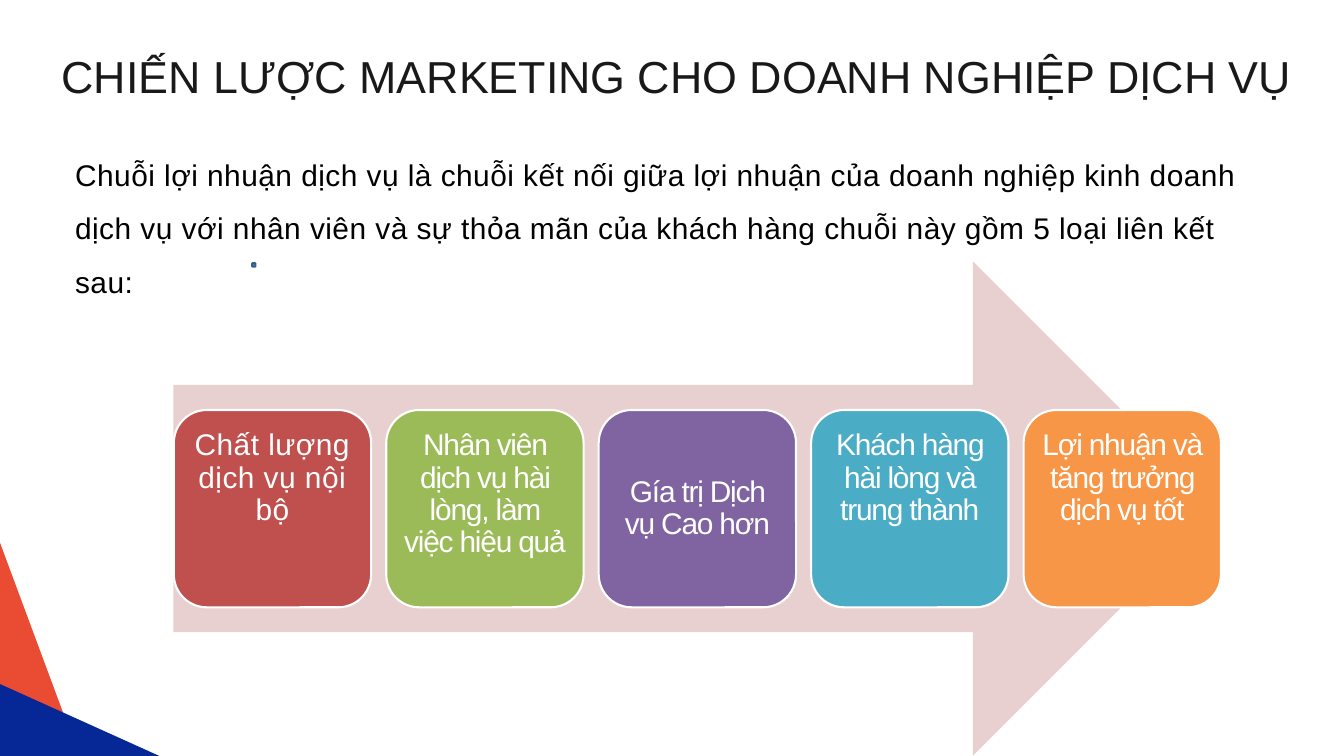
from pptx import Presentation
from pptx.dml.color import RGBColor
from pptx.enum.shapes import MSO_SHAPE
from pptx.enum.text import MSO_ANCHOR, MSO_AUTO_SIZE, PP_ALIGN
from pptx.util import Cm, Pt

TOP, MIDDLE = MSO_ANCHOR.TOP, MSO_ANCHOR.MIDDLE
LEFT, CENTER = PP_ALIGN.LEFT, PP_ALIGN.CENTER
NO_FIT = MSO_AUTO_SIZE.NONE
ARROW, WEDGE = MSO_SHAPE.RIGHT_ARROW, MSO_SHAPE.RIGHT_TRIANGLE
ROUND = MSO_SHAPE.ROUNDED_RECTANGLE

BLACK = RGBColor(0x00, 0x00, 0x00)
INK = RGBColor(0x19, 0x19, 0x19)
WHITE = RGBColor(0xFF, 0xFF, 0xFF)
CORAL = RGBColor(0xEA, 0x4B, 0x33)
NAVY = RGBColor(0x05, 0x28, 0x96)
BLUE = RGBColor(0x4F, 0x81, 0xBD)
STEEL = RGBColor(0x38, 0x5D, 0x8A)
PINK = RGBColor(0xE8, 0xD0, 0xD0)
RED = RGBColor(0xC0, 0x50, 0x4D)
GREEN = RGBColor(0x9B, 0xBB, 0x59)
PURPLE = RGBColor(0x80, 0x64, 0xA2)
TEAL = RGBColor(0x4B, 0xAC, 0xC6)
ORANGE = RGBColor(0xF7, 0x96, 0x46)

prs = Presentation()
prs.slide_width, prs.slide_height = Cm(50.8), Cm(28.58)
slide = prs.slides.add_slide(prs.slide_layouts[5])


def draw(kind, left, top, width, height, fill, line=None, weight=2):
    """Add a preset shape, sized in centimetres, with an optional outline."""
    shape = slide.shapes.add_shape(kind, Cm(left), Cm(top), Cm(width), Cm(height))
    shape.shadow.inherit = False
    shape.fill.solid()
    shape.fill.fore_color.rgb = fill
    if line is None:
        shape.line.fill.background()
    else:
        shape.line.color.rgb = line
        shape.line.width = Pt(weight)
    return shape


def write(shape, text, size=32, color=BLACK, align=LEFT, anchor=TOP,
          lead=57.6, space=0, side=0, head=0):
    """Fill a shape with text; lead and space in points, insets in cm."""
    frame = shape.text_frame
    frame.word_wrap = True
    frame.auto_size = NO_FIT
    frame.vertical_anchor = anchor
    frame.margin_left = frame.margin_right = Cm(side)
    frame.margin_top = frame.margin_bottom = Cm(head)
    para = frame.paragraphs[0]
    para.alignment = align
    para.line_spacing = Pt(lead)
    run = para.add_run()
    run.text = text
    run.font.name = "Arial"
    run.font.size = Pt(size)
    run.font.color.rgb = color
    if space:
        run._r.get_or_add_rPr().set("spc", str(round(space * 100)))


# Title and corner wedges
title = slide.shapes.title
title.left, title.top, title.width, title.height = Cm(0.38), Cm(1.85), Cm(50.42), Cm(2.01)
write(title, "CHIẾN LƯỢC MARKETING CHO DOANH NGHIỆP DỊCH VỤ",
      size=48, color=INK, align=CENTER)
draw(WEDGE, -2.79, 13, 7.42, 19.99, CORAL)
draw(WEDGE, -3.5, 24.28, 16.26, 7.34, NAVY)

# Introduction
draw(ROUND, 9.53, 9.95, 0.13, 0.13, BLUE, line=STEEL)
intro = slide.shapes.add_textbox(Cm(2.84), Cm(5.23), Cm(44.91), Cm(6.1))
write(intro, "Chuỗi lợi nhuận dịch vụ là chuỗi kết nối giữa lợi nhuận của doanh "
      "nghiệp kinh doanh dịch vụ với nhân viên và sự thỏa mãn của khách hàng "
      "chuỗi này gồm 5 loại liên kết sau:", space=0.5)

# Chain of five links on an arrow
draw(ARROW, 6.55, 9.88, 39.57, 18.69, PINK)
LINKS = [
    ("Chất lượng dịch vụ nội bộ", RED, TOP, 0.5),
    ("Nhân viên dịch vụ hài lòng, làm việc hiệu quả", GREEN, TOP, -1.3),
    ("Gía trị Dịch vụ Cao hơn", PURPLE, MIDDLE, -1.3),
    ("Khách hàng hài lòng và trung thành", TEAL, TOP, -1.3),
    ("Lợi nhuận và tăng trưởng dịch vụ tốt", ORANGE, TOP, -1.3),
]
SIDE, PITCH = 7.46, 8.03
for i, (text, fill, anchor, space) in enumerate(LINKS):
    card = draw(ROUND, 6.57 + i * PITCH, 15.5, SIDE, SIDE, fill, line=WHITE, weight=2.25)
    write(card, text, color=WHITE, align=CENTER, anchor=anchor,
          lead=34.6, space=space, side=0.31, head=0.37)

prs.save("out.pptx")
